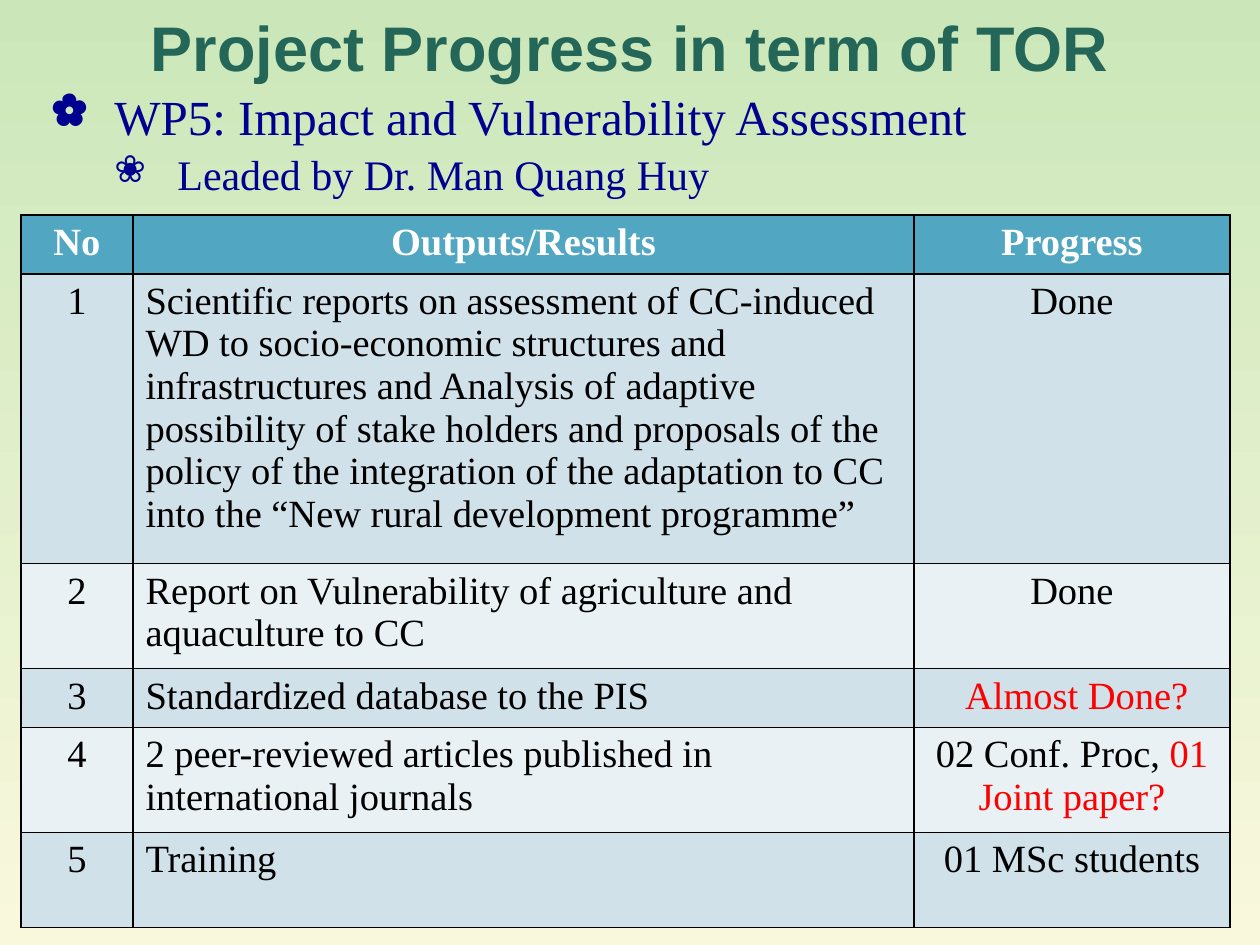
from lxml.etree import SubElement
from pptx import Presentation
from pptx.dml.color import RGBColor
from pptx.enum.text import MSO_ANCHOR, PP_ALIGN
from pptx.oxml.ns import qn
from pptx.util import Pt

PX = 914400 // 126
GREEN_TOP = RGBColor(0xCB, 0xE7, 0xB9)
CREAM = RGBColor(0xF9, 0xF8, 0xDD)
TITLE_GREEN = RGBColor(0x24, 0x66, 0x57)
NAVY = RGBColor(0x00, 0x00, 0x90)
HEADER_BLUE = RGBColor(0x51, 0xA6, 0xC2)
BAND_DARK = RGBColor(0xD0, 0xE1, 0xE9)
BAND_LIGHT = RGBColor(0xE9, 0xF1, 0xF4)
WHITE = RGBColor(0xFF, 0xFF, 0xFF)
BLACK = RGBColor(0x00, 0x00, 0x00)
RED = RGBColor(0xFF, 0x00, 0x00)
SERIF = "Times New Roman"


def style(font, size, color, name=SERIF, bold=False):
    font.size, font.name, font.bold = Pt(size), name, bold
    font.color.rgb = color


def add_borders(cell):
    props = cell._tc.get_or_add_tcPr()
    for position, side in enumerate(("a:lnL", "a:lnR", "a:lnT", "a:lnB")):
        line = props.makeelement(qn(side), {"w": str(Pt(1))})
        fill = SubElement(line, qn("a:solidFill"))
        SubElement(fill, qn("a:srgbClr"), val=str(BLACK))
        props.insert(position, line)


prs = Presentation()
prs.slide_width, prs.slide_height = 1260 * PX, 945 * PX
slide = prs.slides.add_slide(prs.slide_layouts[6])

# Background gradient, top to bottom
backdrop = slide.background.fill
backdrop.gradient()
backdrop.gradient_angle = 270
for stop, color in zip(backdrop.gradient_stops, (GREEN_TOP, CREAM)):
    stop.color.rgb = color

# Title
title = slide.shapes.add_textbox(63 * PX, 14 * PX, 1134 * PX, 72 * PX).text_frame
title.word_wrap = True
title.vertical_anchor = MSO_ANCHOR.MIDDLE
title.text = "Project Progress in term of TOR"
heading = title.paragraphs[0]
heading.alignment = PP_ALIGN.CENTER
heading.line_spacing = 0.95
style(heading.runs[0].font, 36, TITLE_GREEN, "Arial", True)

# Work package and its leader
package = slide.shapes.add_textbox(39 * PX, 80 * PX, 1158 * PX, 121 * PX).text_frame
package.word_wrap = True
package_lines = [
    ("WP5: Impact and Vulnerability Assessment", "✿", 28),
    ("Leaded by Dr. Man Quang Huy", "❀", 24),
]
package.text = "\n".join(text for text, _, _ in package_lines)
for level, (paragraph, (_, bullet, size)) in enumerate(zip(package.paragraphs, package_lines)):
    paragraph.level = level
    if level:
        paragraph.space_before = Pt(2)
    props = paragraph._p.get_or_add_pPr()
    props.set("marL", str(63 * (level + 1) * PX))
    props.set("indent", str(-63 * PX))
    SubElement(props, qn("a:buSzPct"), val="90000")
    SubElement(props, qn("a:buChar"), char=bullet)
    style(paragraph.runs[0].font, size, NAVY)

# Progress table: each row is number, output, progress in black, progress in red
outputs = [
    ("No", "Outputs/Results", "Progress", ""),
    ("1", "Scientific reports on assessment of CC-induced WD to socio-economic "
          "structures and infrastructures and Analysis of adaptive possibility of "
          "stake holders and proposals of the policy of the integration of the "
          "adaptation to CC into the “New rural development programme”", "Done", ""),
    ("2", "Report on Vulnerability of agriculture and aquaculture to CC", "Done", ""),
    ("3", "Standardized database to the PIS", " ", "Almost Done?"),
    ("4", "2 peer-reviewed articles published in international journals",
     "02 Conf. Proc, ", "01 Joint paper?"),
    ("5", "Training", "01 MSc students", ""),
]
col_widths = [112, 781, 316]
row_heights = [56, 275, 100, 56, 99, 95]
progress = slide.shapes.add_table(
    len(outputs), len(col_widths), 21 * PX, 215 * PX,
    sum(col_widths) * PX, sum(row_heights) * PX).table
for column, width in zip(progress.columns, col_widths):
    column.width = width * PX
for row, height in zip(progress.rows, row_heights):
    row.height = height * PX

for r, (*texts, open_item) in enumerate(outputs):
    is_header = r == 0
    band = HEADER_BLUE if is_header else (BAND_LIGHT, BAND_DARK)[r % 2]
    for c, text in enumerate(texts):
        cell = progress.cell(r, c)
        cell.fill.solid()
        cell.fill.fore_color.rgb = band
        add_borders(cell)
        cell.text_frame.text = text
        paragraph = cell.text_frame.paragraphs[0]
        is_output = c == 1 and not is_header
        paragraph.alignment = PP_ALIGN.LEFT if is_output else PP_ALIGN.CENTER
        style(paragraph.runs[0].font, 22, WHITE if is_header else BLACK, bold=is_header)
    if open_item:
        question = paragraph.add_run()
        question.text = open_item
        style(question.font, 22, RED)

prs.save("out.pptx")
